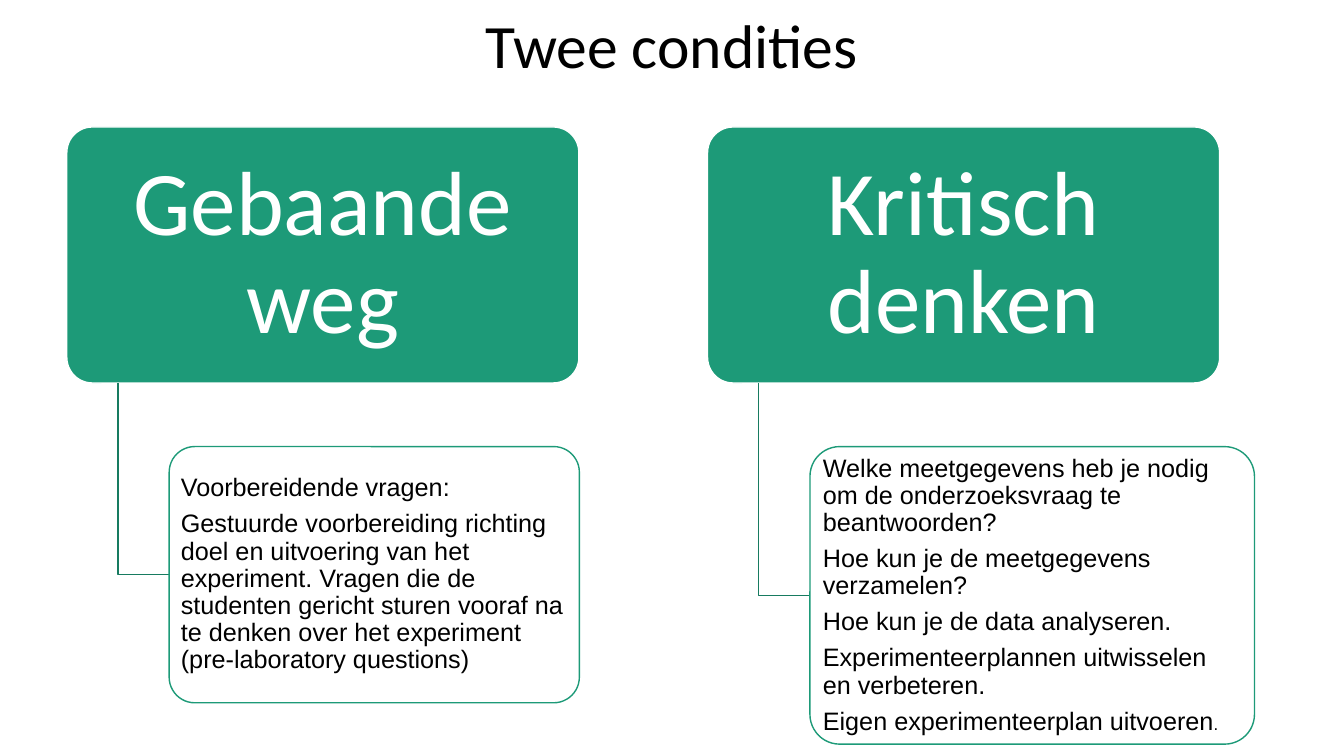
from pptx import Presentation
from pptx import util as u
from pptx.dml.color import RGBColor
from pptx.enum import shapes, text

TITLE = "Twee condities"
# Each condition: left edge, heading, note width and height, note paragraphs as (text, size) runs
CONDITIONS = [
    (47.7, "Gebaande weg", 293, 183, [
        [("Voorbereidende vragen:", 18)],
        [("Gestuurde voorbereiding richting doel en uitvoering van het experiment. "
          "Vragen die de studenten gericht sturen vooraf na te denken over het "
          "experiment (pre-laboratory questions)", 18)],
    ]),
    (505.4, "Kritisch denken", 317.5, 212.5, [
        [("Welke meetgegevens heb je nodig om de onderzoeksvraag te beantwoorden?", 18)],
        [("Hoe kun je de meetgegevens verzamelen?", 18)],
        [("Hoe kun je de data analyseren.", 18)],
        [("Experimenteerplannen uitwisselen en verbeteren.", 18)],
        [("Eigen experimenteerplan uitvoeren", 18), (".", 12)],
    ]),
]
GREEN, DARK_GREEN, WHITE, BLACK = "1D9A78", "177B60", "FFFFFF", "000000"
HEAD_TOP, HEAD_WIDTH, HEAD_HEIGHT = 90.7, 365.8, 182.9
NOTE_TOP = 319
INDENT = HEAD_WIDTH / 10


def color(value):
    return RGBColor.from_string(value)


def write(shape, paragraphs, font="Arial", ink=BLACK, align=text.PP_ALIGN.LEFT,
          margins=(3, 2), after=6.3):
    frame = shape.text_frame
    frame.word_wrap = True
    frame.auto_size = text.MSO_AUTO_SIZE.NONE
    frame.vertical_anchor = text.MSO_ANCHOR.MIDDLE
    frame.margin_left = frame.margin_right = u.Pt(margins[0])
    frame.margin_top = frame.margin_bottom = u.Pt(margins[1])
    for index, runs in enumerate(paragraphs):
        paragraph = frame.add_paragraph() if index else frame.paragraphs[0]
        paragraph.alignment = align
        paragraph.line_spacing = 0.9
        paragraph.space_before = u.Pt(0)
        paragraph.space_after = u.Pt(after)
        for words, size in runs:
            run = paragraph.add_run()
            run.text = words
            run.font.name = font
            run.font.size = u.Pt(size)
            run.font.color.rgb = color(ink)


def add_card(slide, left, top, width, height, fill, line):
    card = slide.shapes.add_shape(shapes.MSO_SHAPE.ROUNDED_RECTANGLE,
                                  u.Pt(left), u.Pt(top), u.Pt(width), u.Pt(height))
    card.adjustments[0] = 0.1
    card.shadow.inherit = False
    card.fill.solid()
    card.fill.fore_color.rgb = color(fill)
    card.line.color.rgb = color(line)
    card.line.width = u.Pt(1)
    return card


def add_elbow(slide, left, top, bottom):
    builder = slide.shapes.build_freeform(u.Pt(left), u.Pt(top))
    builder.add_line_segments([(u.Pt(left), u.Pt(bottom)),
                               (u.Pt(left + INDENT), u.Pt(bottom))], close=False)
    elbow = builder.convert_to_shape()
    elbow.shadow.inherit = False
    elbow.fill.background()
    elbow.line.color.rgb = color(DARK_GREEN)
    elbow.line.width = u.Pt(1)


def main():
    presentation = Presentation()
    presentation.slide_width, presentation.slide_height = u.Pt(960), u.Pt(540)
    slide = presentation.slides.add_slide(presentation.slide_layouts[5])

    # Title
    title = slide.shapes.title
    title.left, title.top = u.Pt(66), u.Pt(-17.5)
    title.width, title.height = u.Pt(828), u.Pt(104.4)
    write(title, [[(TITLE, 44)]], font="Calibri", align=text.PP_ALIGN.CENTER,
          margins=(7.2, 3.6), after=0)

    # Heading, elbow line and note for each condition
    for left, heading, width, height, paragraphs in CONDITIONS:
        head = add_card(slide, left, HEAD_TOP, HEAD_WIDTH, HEAD_HEIGHT, GREEN, WHITE)
        write(head, [[(heading, 65)]], font="Calibri", ink=WHITE,
              align=text.PP_ALIGN.CENTER, margins=(10, 6.5), after=0)
        add_elbow(slide, left + INDENT, HEAD_TOP + HEAD_HEIGHT, NOTE_TOP + height / 2)
        note = add_card(slide, left + 2 * INDENT, NOTE_TOP, width, height, WHITE, GREEN)
        write(note, paragraphs)

    presentation.save("out.pptx")


if __name__ == "__main__":
    main()
